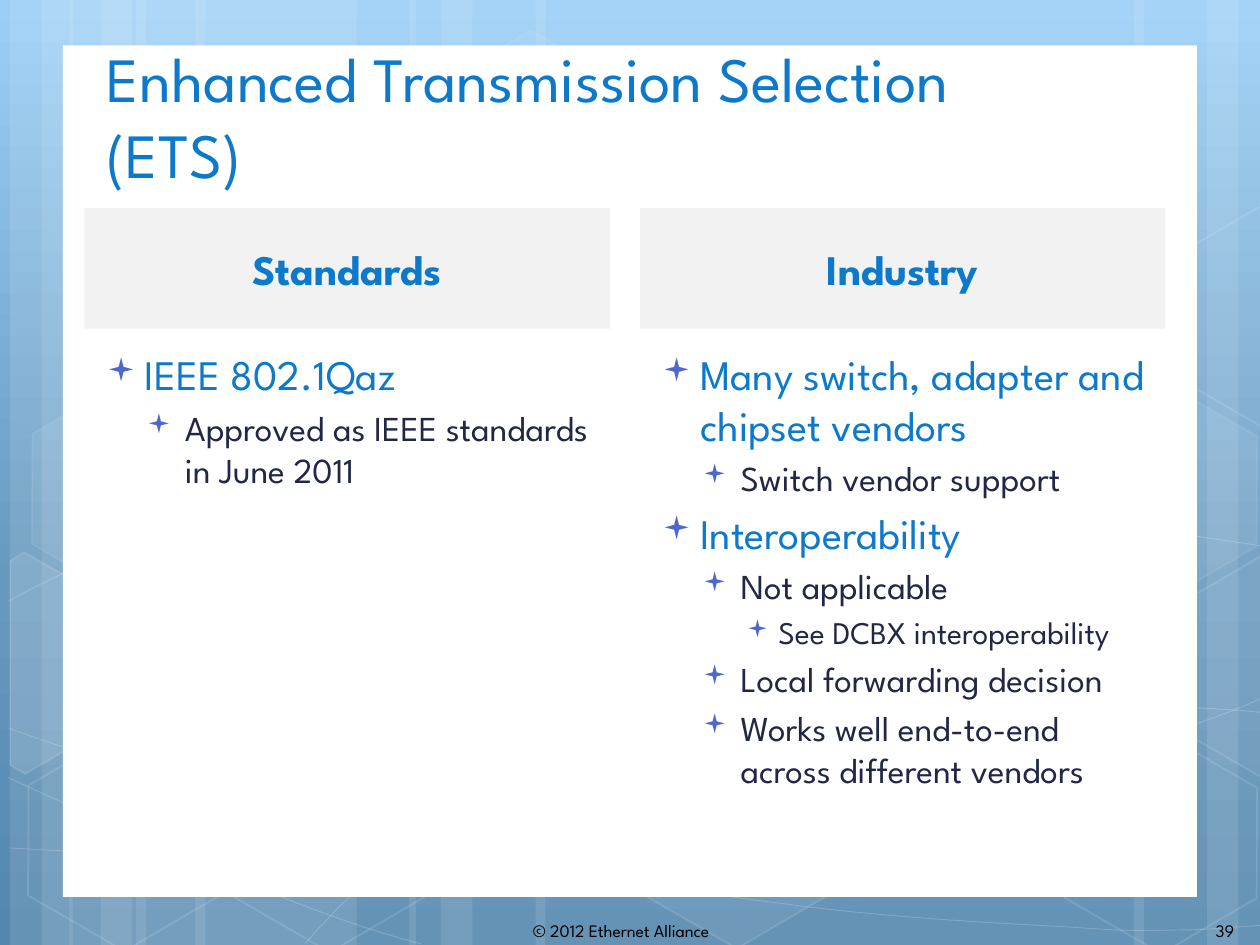
from copy import deepcopy
from math import cos, radians, sin
from typing import NamedTuple, Optional

from lxml.etree import SubElement
from pptx import Presentation
from pptx.dml.color import RGBColor
from pptx.enum.shapes import MSO_SHAPE as Preset
from pptx.enum.text import MSO_ANCHOR as Anchor, PP_ALIGN as Align
from pptx.oxml.ns import qn
from pptx.util import Inches, Pt

FONT = "League Spartan"
TILT = 30
COLORS = {
    "sky": "9BCFF7", "mid": "6798BE", "deep": "5487AE", "white": "FFFFFF", "header": "F2F2F2",
    "accent": "0D79CA", "body": "212745", "bullet": "4E67C8", "black": "000000",
}
Point = tuple[float, float]


class Stripe(NamedTuple):
    left: float
    width: float


class Curve(NamedTuple):
    """A start point, then three points per cubic segment; straight is the index of a one-point segment."""
    points: list[Point]
    straight: Optional[int] = None


class Hexagon(NamedTuple):
    left: float
    top: float
    fill: int
    line: int


class Shard(NamedTuple):
    center: Point
    points: list[Point]
    fill: int


class Level(NamedTuple):
    indent: float
    hanging: float
    size: int
    color: str


class Column(NamedTuple):
    left: float
    heading: str
    items: list[tuple[int, str]]


STRIPES = [
    Stripe(1.08, 1.75), Stripe(0.08, 0.5), Stripe(0.33, 0.83), Stripe(1.55, 1.75),
    Stripe(0.55, 0.5), Stripe(0.8, 0.83), Stripe(7.33, 1.75), Stripe(9.58, 0.5),
    Stripe(9, 0.83), Stripe(4.25, 3.08), Stripe(3.25, 0.5), Stripe(3.5, 0.83),
]
CURVES = [
    Curve([(0.07, 6.73), (0.61, 6.76), (1.15, 6.79), (1.9, 6.78), (2.65, 6.77), (3.58, 6.75),
           (4.58, 6.65), (5.58, 6.55), (7, 6.36), (7.92, 6.17), (8.83, 5.98), (9.77, 5.68), (10.07, 5.51)]),
    Curve([(0.07, 4.77), (0.36, 4.61), (0.65, 4.46), (1.21, 4.31), (1.78, 4.16), (2.59, 3.94),
           (3.47, 3.87), (4.36, 3.8), (5.44, 3.79), (6.54, 3.87), (7.64, 3.95), (9.47, 4.26), (10.07, 4.34)]),
    Curve([(0.06, 6.17), (1.27, 6.72), (2.47, 7.27), (3.34, 7.49)]),
    Curve([(0.07, 5.78), (0.38, 5.89), (0.7, 6), (1.28, 6.16), (1.86, 6.31), (2.73, 6.56),
           (3.57, 6.73), (4.4, 6.9), (5.45, 7.08), (6.28, 7.18), (7.11, 7.29), (8, 7.33), (8.53, 7.36),
           (9.05, 7.4), (9.19, 7.38), (9.45, 7.38), (9.71, 7.37), (9.89, 7.35), (10.07, 7.34)]),
    Curve([(2.42, 7.49), (2.6, 7.29), (2.78, 7.09), (3.02, 6.91), (3.26, 6.73), (3.6, 6.53),
           (3.88, 6.39), (4.16, 6.25), (4.33, 6.19), (4.7, 6.09), (5.06, 5.99), (5.73, 5.85),
           (6.08, 5.78), (6.44, 5.71), (6.49, 5.71), (6.8, 5.69), (7.11, 5.66), (7.6, 5.63),
           (7.94, 5.62), (8.29, 5.61), (8.86, 5.62), (8.86, 5.62), (9.53, 5.62), (9.71, 5.63),
           (9.88, 5.64), (9.97, 5.65), (10.06, 5.66), (10.03, 5.65), (10.06, 5.66)], straight=7),
]
HEXAGONS = [
    Hexagon(3.34, 0.36, 4, 8), Hexagon(4.97, 5.89, 6, 12), Hexagon(0.11, 5.91, 0, 12),
    Hexagon(0.14, 3.12, 7, 8), Hexagon(1.74, 5.92, 0, 12), Hexagon(7.53, 4.53, 10, 12),
    Hexagon(8.34, 5.93, 0, 12), Hexagon(8.34, 3.14, 7, 8),
]
SHARDS = [
    Shard((0.36, 5.35), [(0.08, 4.45), (0.19, 4.38), (0.96, 4.82), (0.95, 5.7), (0.2, 6.14), (0.08, 6.07)], 10),
    Shard((9.85, 5.2), [(9.26, 4.85), (10.01, 4.41), (10.09, 4.46), (10.09, 6.13), (10.02, 6.17), (9.26, 5.73)], 4),
    Shard((9.85, 2.41), [(9.26, 2.07), (10.01, 1.63), (10.1, 1.68), (10.09, 3.35), (10.02, 3.39), (9.26, 2.95)], 0),
]
LEVELS = [Level(0.38, 0.3, 24, "accent"), Level(0.7, 0.3, 20, "body"), Level(1, 0.25, 18, "body")]
COLUMNS = [
    Column(0.67, "Standards", [(0, "IEEE 802.1Qaz"), (1, "Approved as IEEE standards in June 2011")]),
    Column(5.08, "Industry", [
        (0, "Many switch, adapter and chipset vendors"), (1, "Switch vendor support"),
        (0, "Interoperability"), (1, "Not applicable"), (2, "See DCBX interoperability"),
        (1, "Local forwarding decision"), (1, "Works well end-to-end across different vendors"),
    ]),
]


def rgb(name: str) -> RGBColor:
    return RGBColor.from_string(COLORS[name])


def paint(shape, fill: Optional[str], opacity: int = 100, line: int = 0, width: float = 1) -> None:
    """Set the fill and white outline; opacity and line are percentages, 0 meaning none."""
    shape.shadow.inherit = False
    if fill and opacity:
        shape.fill.solid()
        shape.fill.fore_color.rgb = rgb(fill)
    else:
        shape.fill.background()
    if line:
        shape.line.width = Pt(width)
        shape.line.color.rgb = rgb("white")
    else:
        shape.line.fill.background()
    for tag, percent in (("a:solidFill", opacity), ("a:ln", line)):
        holder = shape._element.spPr.find(qn(tag))
        color = None if holder is None else next(holder.iter(qn("a:srgbClr")), None)
        if color is not None and percent < 100:
            SubElement(color, qn("a:alpha")).set("val", str(percent * 1000))


def add_rectangle(slide, left: float, top: float, width: float, height: float, fill: str, opacity: int = 100):
    shape = slide.shapes.add_shape(Preset.RECTANGLE, Inches(left), Inches(top), Inches(width), Inches(height))
    paint(shape, fill, opacity)
    return shape


def add_outline(slide, points: list[Point], close: bool):
    corners = [(Inches(x), Inches(y)) for x, y in points]
    builder = slide.shapes.build_freeform(*corners[0])
    builder.add_line_segments(corners[1:], close=close)
    return builder.convert_to_shape()


def add_curve(slide, curve: Curve) -> None:
    """Draw the control polygon, then join its sides by threes into cubic segments."""
    shape = add_outline(slide, curve.points, False)
    sides = list(shape._element.iter(qn("a:lnTo")))
    segment = 0
    while sides:
        if segment == curve.straight:
            sides.pop(0)
        else:
            group, sides = sides[:3], sides[3:]
            group[0].addprevious(cubic := group[0].makeelement(qn("a:cubicBezTo")))
            for side in group:
                cubic.append(side[0])
                side.getparent().remove(side)
        segment += 1
    paint(shape, None, line=20, width=0.5)


def add_shard(slide, shard: Shard) -> None:
    """Turn the points back by the tilt, so that the tilted shape lands on them."""
    center_x, center_y = shard.center
    cosine, sine = cos(radians(TILT)), sin(radians(TILT))
    offsets = [(x - center_x, y - center_y) for x, y in shard.points + shard.points[:1]]
    level = [(center_x + x * cosine + y * sine, center_y - x * sine + y * cosine) for x, y in offsets]
    shape = add_outline(slide, level, True)
    shape.rotation = TILT
    paint(shape, "white", shard.fill, 12)


def add_hexagon(slide, hexagon: Hexagon) -> None:
    shape = slide.shapes.add_shape(
        Preset.HEXAGON, Inches(hexagon.left), Inches(hexagon.top), Inches(1.75), Inches(1.52))
    shape.rotation = TILT
    shape.adjustments[0] = 0.285
    paint(shape, "white", hexagon.fill, hexagon.line)


def add_background(slide) -> None:
    fill = slide.background.fill
    fill.gradient()
    fill.gradient_angle = 270
    stop_list = next(slide._element.iter(qn("a:gsLst")))
    stop_list.append(deepcopy(stop_list[-1]))
    for stop, (position, color) in zip(fill.gradient_stops, ((0, "sky"), (0.62, "mid"), (1, "deep"))):
        stop.position = position
        stop.color.rgb = rgb(color)


def add_text(paragraph, text: str, size: int, color: str, bold: bool = False) -> None:
    run = paragraph.add_run()
    run.text = text
    run.font.name, run.font.size, run.font.bold = FONT, Pt(size), bold
    run.font.color.rgb = rgb(color)


def add_text_box(slide, left: float, top: float, width: float, height: float, wrap: bool = True):
    box = slide.shapes.add_textbox(Inches(left), Inches(top), Inches(width), Inches(height))
    box.text_frame.word_wrap = wrap
    return box.text_frame


def add_bullet(paragraph, level: Level) -> None:
    properties = paragraph._p.get_or_add_pPr()
    properties.set("marL", str(Inches(level.indent)))
    properties.set("indent", str(-Inches(level.hanging)))
    SubElement(SubElement(properties, qn("a:buClr")), qn("a:srgbClr")).set("val", COLORS["bullet"])
    for tag, key, value in (("buSzPct", "val", "76000"), ("buFont", "typeface", "Wingdings"), ("buChar", "char", "▪")):
        SubElement(properties, qn(f"a:{tag}")).set(key, value)


def add_column(slide, column: Column) -> None:
    header = add_rectangle(slide, column.left, 1.65, 4.17, 0.96, "header").text_frame
    header.vertical_anchor = Anchor.MIDDLE
    header.paragraphs[0].alignment = Align.CENTER
    add_text(header.paragraphs[0], column.heading, 24, "accent", bold=True)
    frame = add_text_box(slide, column.left, 2.72, 4.17, 4.2)
    for index, (depth, text) in enumerate(column.items):
        level = LEVELS[depth]
        paragraph = frame.add_paragraph() if index else frame.paragraphs[0]
        paragraph.level = depth
        if index:
            paragraph.space_before = Pt(level.size * 0.2)
        add_bullet(paragraph, level)
        add_text(paragraph, text, level.size, level.color)


def main() -> None:
    presentation = Presentation()
    presentation.slide_width, presentation.slide_height = Inches(10), Inches(7.5)
    slide = presentation.slides.add_slide(presentation.slide_layouts[6])
    add_background(slide)
    for stripe in STRIPES:
        add_rectangle(slide, stripe.left, 0, stripe.width, 7.5, "white", 10)
    for draw, parts in ((add_curve, CURVES), (add_hexagon, HEXAGONS), (add_shard, SHARDS)):
        for part in parts:
            draw(slide, part)
    add_rectangle(slide, 0.5, 0.36, 9, 6.76, "white")
    for left, width, text in ((9.55, 0.37, "39"), (4.13, 1.85, "© 2012 Ethernet Alliance")):
        add_text(add_text_box(slide, left, 7.25, width, 0.27, wrap=False).paragraphs[0], text, 10, "black")
    title = add_text_box(slide, 0.75, 0.49, 7, 0.85)
    title.vertical_anchor = Anchor.MIDDLE
    add_text(title.paragraphs[0], "Enhanced Transmission Selection (ETS)", 36, "accent")
    for column in COLUMNS:
        add_column(slide, column)
    presentation.save("out.pptx")


if __name__ == "__main__":
    main()
